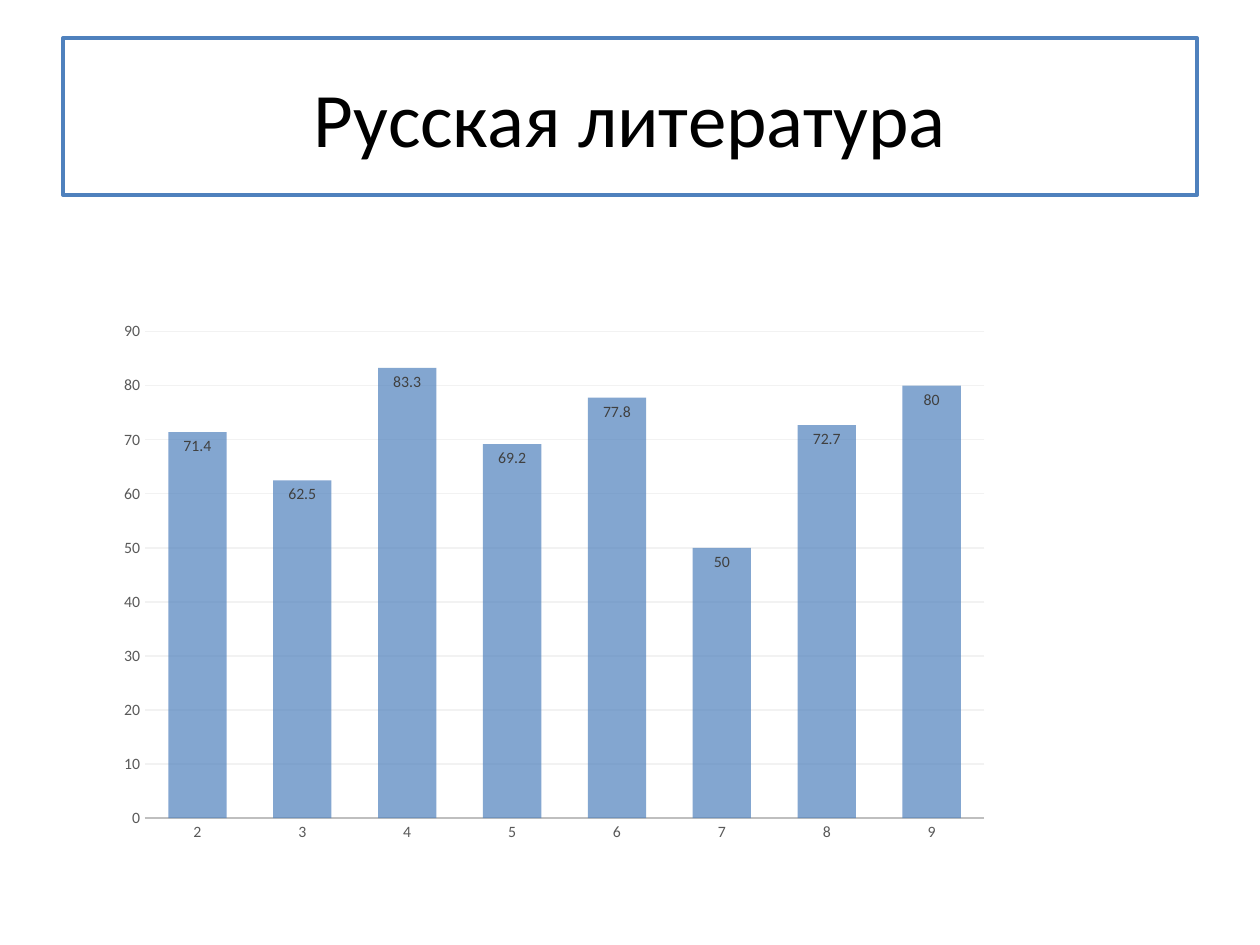
from lxml import etree
from pptx import Presentation
from pptx.chart.data import CategoryChartData
from pptx.dml.color import RGBColor
from pptx.enum.chart import XL_CHART_TYPE, XL_LABEL_POSITION, XL_TICK_MARK
from pptx.enum.text import MSO_ANCHOR, PP_ALIGN
from pptx.oxml.ns import qn
from pptx.util import Pt

STACKED = XL_CHART_TYPE.COLUMN_STACKED
INSIDE_END = XL_LABEL_POSITION.INSIDE_END
NO_TICK = XL_TICK_MARK.NONE
MIDDLE = MSO_ANCHOR.MIDDLE
CENTER = PP_ALIGN.CENTER

FONT = "Calibri"
COLORS = {
    "paper": "FFFFFF",
    "accent": "4F81BD",
    "title": "000000",
    "axis_text": "595959",
    "label_text": "404040",
    "axis_line": "BFBFBF",
    "grid": "F2F2F2",
}
GRADES = ["2", "3", "4", "5", "6", "7", "8", "9"]
PERCENTAGES = [71.4, 62.5, 83.3, 69.2, 77.8, 50, 72.7, 80]
PLOT_LAYOUT = {
    "layoutTarget": "inner",
    "xMode": "edge",
    "yMode": "edge",
    "x": 0.07,
    "y": 0.14,
    "w": 0.74,
    "h": 0.78,
}


def color(name):
    return RGBColor.from_string(COLORS[name])


def apply_format(target, values):
    for name, value in values.items():
        setattr(target, name, value)


def format_font(font, size, color_name):
    apply_format(font, {"name": FONT, "size": Pt(size), "bold": False})
    font.color.rgb = color(color_name)


def format_line(line, width, color_name):
    line.width = Pt(width)
    line.color.rgb = color(color_name)


def add_title(page, text):
    box = page.shapes.title
    apply_format(box, {"left": Pt(36), "top": Pt(21.6),
                       "width": Pt(648), "height": Pt(90)})
    box.fill.solid()
    box.fill.fore_color.rgb = color("paper")
    format_line(box.line, 2, "accent")
    box.text_frame.text = text
    box.text_frame.vertical_anchor = MIDDLE
    para = box.text_frame.paragraphs[0]
    para.alignment = CENTER
    format_font(para.runs[0].font, 44, "title")


def set_plot_layout(chart):
    plot_area = chart._chartSpace.chart.plotArea
    for old in plot_area.findall(qn("c:layout")):
        plot_area.remove(old)
    layout = etree.Element(qn("c:layout"))
    manual = etree.SubElement(layout, qn("c:manualLayout"))
    for name, value in PLOT_LAYOUT.items():
        etree.SubElement(manual, qn(f"c:{name}")).set("val", str(value))
    plot_area.insert(0, layout)


def format_axes(chart):
    for axis in (chart.category_axis, chart.value_axis):
        apply_format(axis, {"major_tick_mark": NO_TICK,
                            "minor_tick_mark": NO_TICK})
        format_font(axis.tick_labels.font, 9, "axis_text")
    format_line(chart.category_axis.format.line, 1.25, "axis_line")
    scale = chart.value_axis
    apply_format(scale, {"minimum_scale": 0, "maximum_scale": 90,
                         "major_unit": 10, "has_major_gridlines": True})
    scale.format.line.fill.background()
    format_line(scale.major_gridlines.format.line, 0.75, "grid")


def format_columns(plot):
    apply_format(plot, {"gap_width": 80, "overlap": 100,
                        "vary_by_categories": False,
                        "has_data_labels": True})
    apply_format(plot.data_labels, {"show_value": True,
                                    "position": INSIDE_END})
    format_font(plot.data_labels.font, 9, "label_text")
    columns = plot.series[0]
    columns.format.fill.solid()
    columns.format.fill.fore_color.rgb = color("accent")
    shade = columns._element.spPr.find(".//" + qn("a:srgbClr"))
    etree.SubElement(shade, qn("a:alpha")).set("val", "70000")


def add_column_chart(page):
    data = CategoryChartData()
    data.categories = GRADES
    data.add_series("Series 1", PERCENTAGES)
    frame = page.shapes.add_chart(STACKED, Pt(37.5), Pt(139.7),
                                  Pt(648), Pt(356.4), data)
    chart = frame.chart
    apply_format(chart, {"has_title": False, "has_legend": False})
    format_font(chart.font, 10, "title")
    set_plot_layout(chart)
    format_axes(chart)
    format_columns(chart.plots[0])


def main():
    deck = Presentation()
    apply_format(deck, {"slide_width": Pt(720), "slide_height": Pt(540)})
    page = deck.slides.add_slide(deck.slide_layouts[5])
    add_title(page, "Русская литература")
    add_column_chart(page)
    deck.save("out.pptx")


if __name__ == "__main__":
    main()
